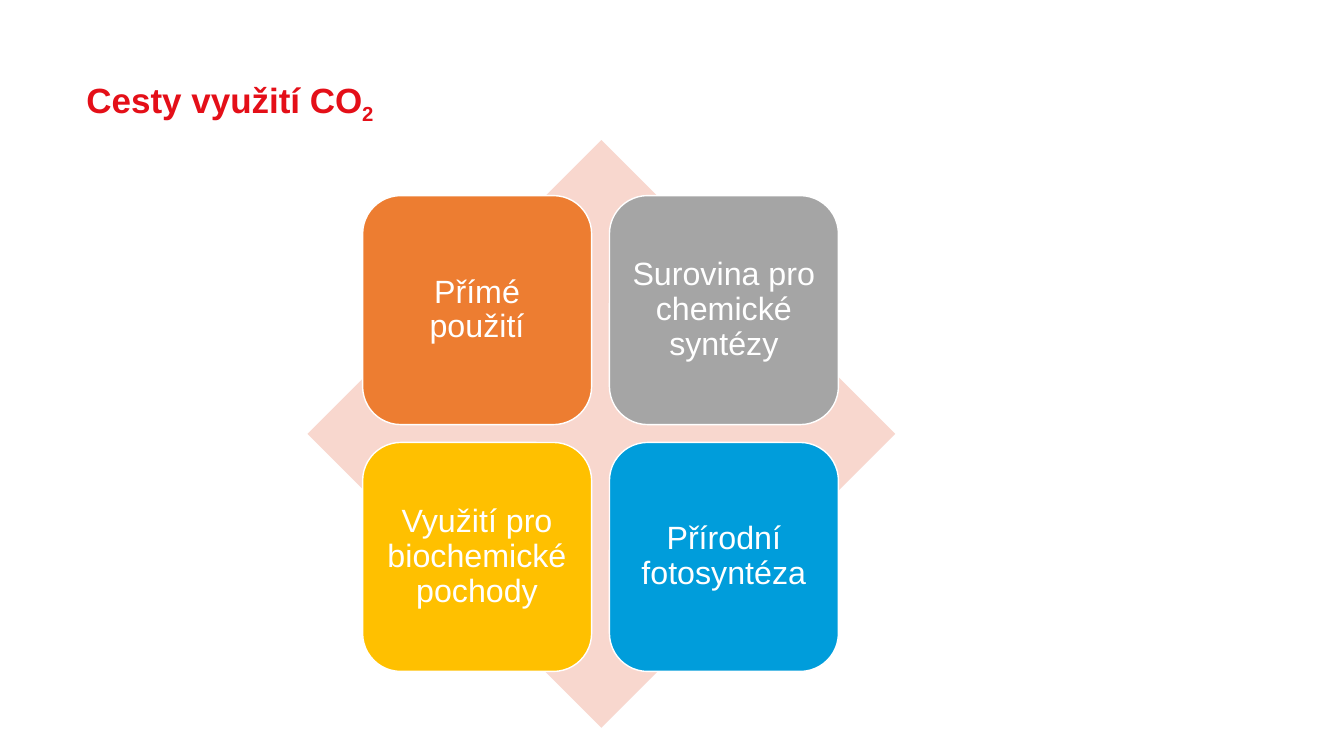
from pptx import Presentation
from pptx.dml.color import RGBColor
from pptx.enum.shapes import MSO_SHAPE
from pptx.enum.text import MSO_ANCHOR, PP_ALIGN
from pptx.util import Cm, Pt

COLORS = {
    "title": "E40F18",
    "diamond": "F8D7CE",
    "orange": "ED7D31",
    "gray": "A5A5A5",
    "yellow": "FFC000",
    "blue": "009DDB",
    "white": "FFFFFF",
}
TILES = [
    ("Přímé použití", "orange"),
    ("Surovina pro chemické syntézy", "gray"),
    ("Využití pro biochemické pochody", "yellow"),
    ("Přírodní fotosyntéza", "blue"),
]
TILE_LEFT, TILE_TOP = 9.14, 4.93
TILE_SIZE, TILE_PITCH = 5.77, 6.22


def add_run(p, text, size, color, bold=False):
    r = p.add_run()
    r.text = text
    r.font.name = "Arial"
    r.font.size = Pt(size)
    r.font.bold = bold
    r.font.color.rgb = RGBColor.from_string(COLORS[color])
    return r


def add_filled(s, kind, left, top, size, color):
    """Add a square-framed shape with a solid fill and no shadow."""
    sp = s.shapes.add_shape(kind, Cm(left), Cm(top), Cm(size), Cm(size))
    sp.shadow.inherit = False
    sp.fill.solid()
    sp.fill.fore_color.rgb = RGBColor.from_string(COLORS[color])
    return sp


prs = Presentation()
prs.slide_width, prs.slide_height = Cm(33.87), Cm(19.05)
s = prs.slides.add_slide(prs.slide_layouts[6])

# Title with a subscript
title = s.shapes.add_textbox(Cm(1.93), Cm(1.52), Cm(30.48), Cm(2.01))
tf = title.text_frame
tf.word_wrap = True
tf.vertical_anchor = MSO_ANCHOR.MIDDLE
p = tf.paragraphs[0]
p.line_spacing = 0.9
add_run(p, "Cesty využití CO", 25, "title", bold=True)
r = add_run(p, "2", 25, "title", bold=True)
r.font._element.set("baseline", "-25000")

# Diamond behind the tiles
diamond = add_filled(s, MSO_SHAPE.DIAMOND, 7.75, 3.53, 14.81, "diamond")
diamond.line.fill.background()

# Two by two tiles
for i, (text, color) in enumerate(TILES):
    row, col = divmod(i, 2)
    tile = add_filled(s, MSO_SHAPE.ROUNDED_RECTANGLE,
                      TILE_LEFT + col * TILE_PITCH,
                      TILE_TOP + row * TILE_PITCH, TILE_SIZE, color)
    tile.line.color.rgb = RGBColor.from_string(COLORS["white"])
    tile.line.width = Pt(1)
    tf = tile.text_frame
    tf.word_wrap = True
    tf.vertical_anchor = MSO_ANCHOR.MIDDLE
    tf.margin_left = tf.margin_right = Cm(0.26)
    tf.margin_top = tf.margin_bottom = Cm(0.26)
    p = tf.paragraphs[0]
    p.alignment = PP_ALIGN.CENTER
    p.line_spacing = 0.9
    add_run(p, text, 23, "white")

prs.save("out.pptx")
